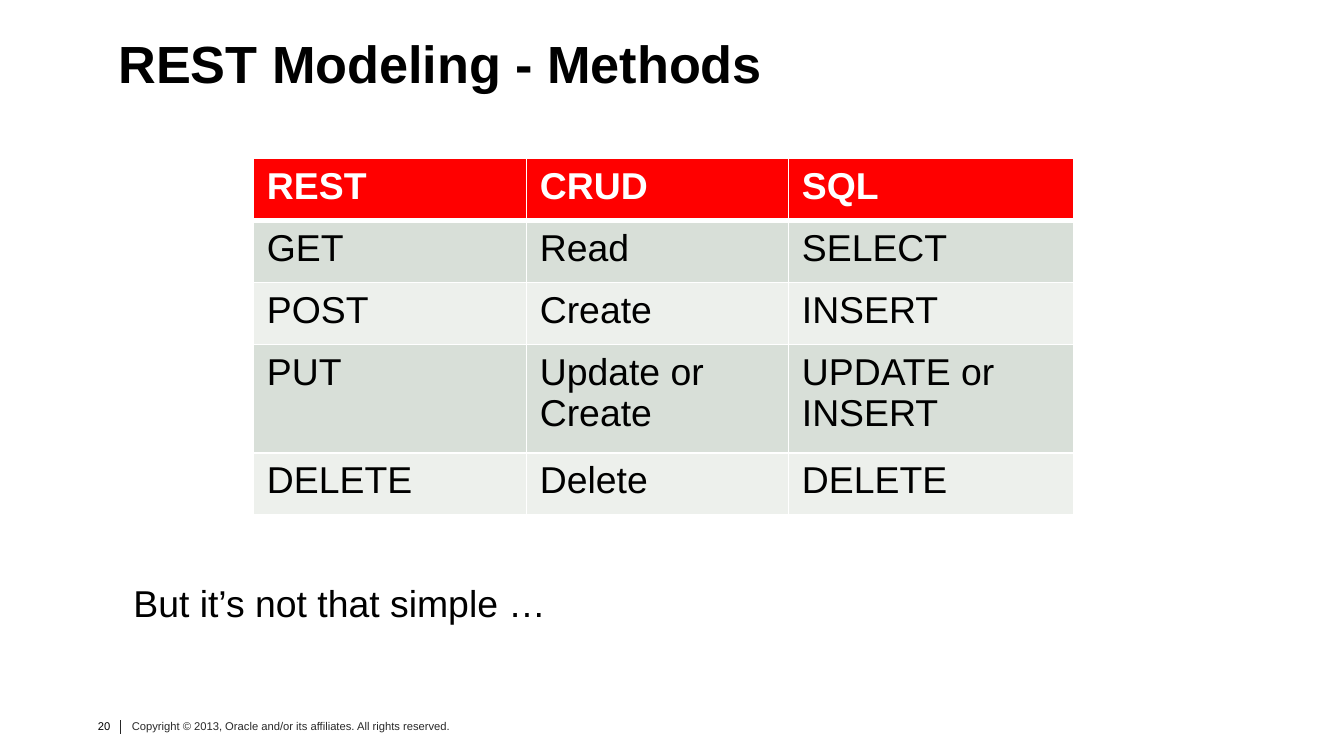
"""Build a slide that maps REST methods to CRUD and SQL operations."""
from dataclasses import dataclass

from lxml import etree
from pptx import Presentation
from pptx.dml import color
from pptx.enum import shapes, text
from pptx.oxml import ns
from pptx.util import Pt

FONT = "Arial"
BLACK, WHITE, RED = "000000", "FFFFFF", "FF0000"
BANDS = ("D8DFD8", "EDF0EC")
COLUMN_WIDTHS = (146.2, 140.4, 152.6)
ROW_HEIGHTS = (33.2, 33.2, 33.2, 58.2, 33.2)
ROWS = (
    ("REST", "CRUD", "SQL"),
    ("GET", "Read", "SELECT"),
    ("POST", "Create", "INSERT"),
    ("PUT", "Update or Create", "UPDATE or INSERT"),
    ("DELETE", "Delete", "DELETE"),
)


@dataclass(frozen=True)
class Label:
    """A text box with one line of text, measured in points."""

    words: str
    left: float
    top: float
    width: float
    height: float
    size: float
    hex_color: str = BLACK
    bold: bool = False
    align: text.PP_ALIGN = text.PP_ALIGN.LEFT
    anchor: text.MSO_ANCHOR = text.MSO_ANCHOR.TOP
    inset_x: float = 0
    inset_y: float = 0


LABELS = (
    Label("20", 46, 383.8, 16, 17.3, 6, align=text.PP_ALIGN.RIGHT,
          inset_x=2.9, inset_y=1.4),
    Label("Copyright © 2013, Oracle and/or its affiliates. All rights reserved.",
          67.7, 383.8, 282.2, 17.3, 6, "292929", inset_x=2.9, inset_y=1.4),
    Label("REST Modeling - Methods", 63.4, 15.8, 517, 35.3, 28, bold=True,
          anchor=text.MSO_ANCHOR.MIDDLE),
    Label("But it’s not that simple …", 71.5, 311, 280.8, 36.7, 20),
)


def rgb(hex_color: str) -> color.RGBColor:
    """Turn a hex string into a colour."""
    return color.RGBColor.from_string(hex_color)


def add_run(paragraph, words: str, size: float, hex_color: str, bold: bool) -> None:
    """Add one styled run to a paragraph."""
    run = paragraph.add_run()
    run.text = words
    run.font.name = FONT
    run.font.size = Pt(size)
    run.font.bold = bold
    run.font.color.rgb = rgb(hex_color)


def add_label(slide, label: Label) -> None:
    """Draw a label as a text box."""
    box = slide.shapes.add_textbox(
        Pt(label.left), Pt(label.top), Pt(label.width), Pt(label.height))
    frame = box.text_frame
    frame.word_wrap = True
    frame.vertical_anchor = label.anchor
    frame.margin_left = frame.margin_right = Pt(label.inset_x)
    frame.margin_top = frame.margin_bottom = Pt(label.inset_y)
    paragraph = frame.paragraphs[0]
    paragraph.alignment = label.align
    add_run(paragraph, label.words, label.size, label.hex_color, label.bold)


def add_divider(slide) -> None:
    """Draw the thin line between page number and copyright."""
    line = slide.shapes.add_connector(
        shapes.MSO_CONNECTOR.STRAIGHT, Pt(64.8), Pt(385.9), Pt(64.8), Pt(393.1))
    line.line.color.rgb = rgb("262626")
    line.line.width = Pt(0.5)
    etree.SubElement(line._element.spPr, ns.qn("a:effectLst"))


def set_borders(cell, top: float, bottom: float) -> None:
    """Give a cell white borders, one point wide at the sides."""
    properties = cell._tc.get_or_add_tcPr()
    for side, width in (("L", 1), ("R", 1), ("T", top), ("B", bottom)):
        border = etree.SubElement(properties, ns.qn(f"a:ln{side}"), w=str(Pt(width)))
        fill = etree.SubElement(border, ns.qn("a:solidFill"))
        etree.SubElement(fill, ns.qn("a:srgbClr"), val=WHITE)


def add_methods_table(slide) -> None:
    """Draw the table of methods with a red header and banded rows."""
    table = slide.shapes.add_table(
        len(ROWS), len(COLUMN_WIDTHS), Pt(135.8), Pt(85),
        Pt(sum(COLUMN_WIDTHS)), Pt(sum(ROW_HEIGHTS))).table
    for column, width in zip(table.columns, COLUMN_WIDTHS):
        column.width = Pt(width)
    for index, (row, height, entries) in enumerate(zip(table.rows, ROW_HEIGHTS, ROWS)):
        row.height = Pt(height)
        header = index == 0
        for cell, words in zip(row.cells, entries):
            set_borders(cell, top=3 if index == 1 else 1, bottom=3 if header else 1)
            cell.fill.solid()
            cell.fill.fore_color.rgb = rgb(RED if header else BANDS[(index - 1) % 2])
            add_run(cell.text_frame.paragraphs[0], words, 20,
                    WHITE if header else BLACK, header)


def main() -> None:
    """Build and save the presentation."""
    presentation = Presentation()
    presentation.slide_width, presentation.slide_height = Pt(720), Pt(405)
    slide = presentation.slides.add_slide(presentation.slide_layouts[6])
    for label in LABELS:
        add_label(slide, label)
    add_divider(slide)
    add_methods_table(slide)
    presentation.save("out.pptx")


if __name__ == "__main__":
    main()
